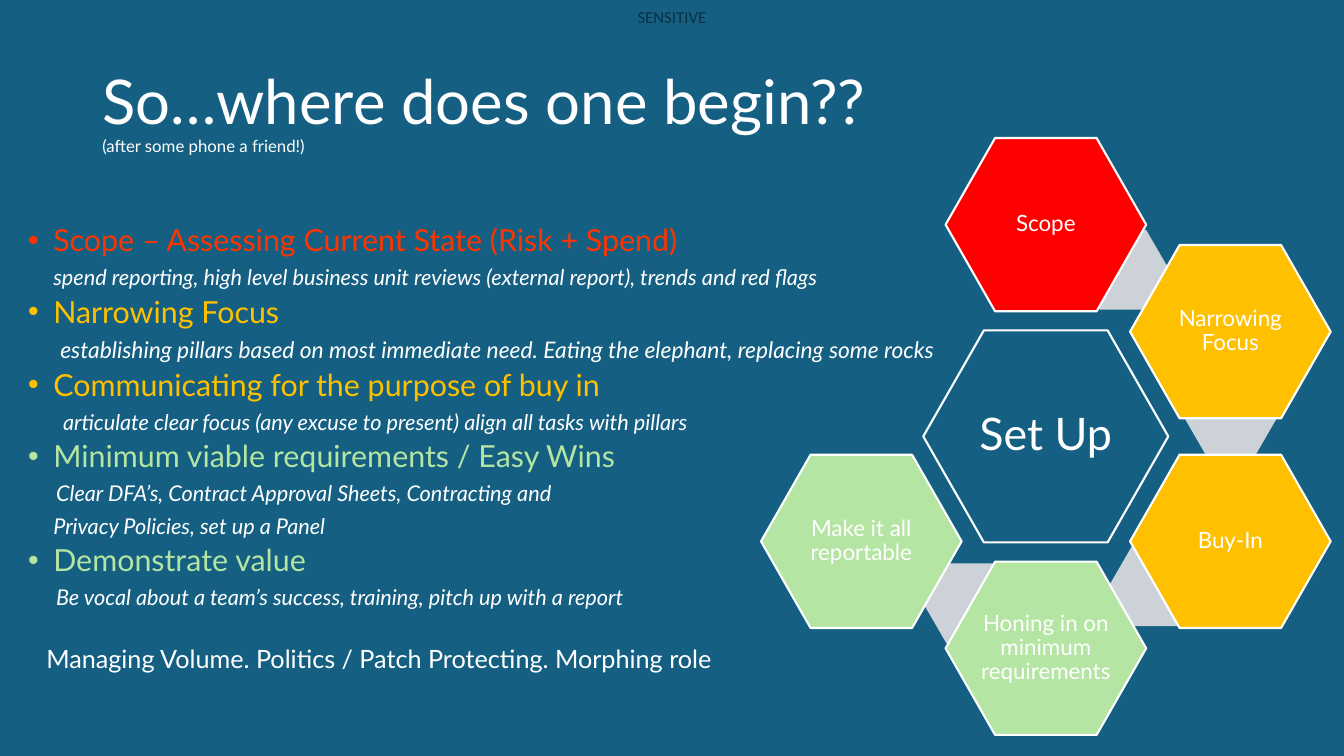
import pptx
import pptx.util
import pptx.dml.color
import pptx.enum.shapes
import pptx.enum.text
import pptx.oxml.ns
import lxml.etree
from dataclasses import dataclass

Pt = pptx.util.Pt
Align = pptx.enum.text.PP_ALIGN
Anchor = pptx.enum.text.MSO_ANCHOR


@dataclass(frozen=True)
class Theme:
    # Colours
    back: str = "156082"
    white: str = "FFFFFF"
    black: str = "000000"
    scarlet: str = "FF3300"
    red: str = "FF0000"
    gold: str = "FFC000"
    green: str = "B4E5A2"
    grey: str = "CCD2D8"
    # Fonts and type sizes
    font: str = "Lato"
    mark_font: str = "Calibri"
    title: float = 44
    hub: float = 32
    head: float = 21.7
    wide_note: float = 16.3
    note: float = 15.5
    foot: float = 18
    label: float = 16
    small: float = 12


def rgb(code):
    return pptx.dml.color.RGBColor.from_string(code)


def add_node(parent, tag, **attrs):
    return lxml.etree.SubElement(parent, pptx.oxml.ns.qn(tag), attrs)


class Page:
    def __init__(self, slide, theme):
        self.slide, self.theme = slide, theme
        fill = slide.background.fill
        fill.solid()
        fill.fore_color.rgb = rgb(theme.back)

    def run(self, para, text, size, hue=None, slant=False, font=None):
        run = para.add_run()
        run.text = text
        run.font.size = Pt(size)
        run.font.name = font or self.theme.font
        run.font.italic = slant
        run.font.color.rgb = rgb(hue or self.theme.white)
        return run

    def frame(self, shape, inset, anchor):
        frame = shape.text_frame
        frame.word_wrap = True
        frame.vertical_anchor = anchor
        frame.margin_left = frame.margin_right = Pt(inset[0])
        frame.margin_top = frame.margin_bottom = Pt(inset[1])
        return frame

    def box(self, left, top, width, height, inset=(7.2, 3.6), anchor=Anchor.TOP):
        shape = self.slide.shapes.add_textbox(Pt(left), Pt(top), Pt(width), Pt(height))
        return self.frame(shape, inset, anchor)

    def hex(self, left, top, width, height, fill, text=None, size=None, inset=1.5):
        shape = self.slide.shapes.add_shape(
            pptx.enum.shapes.MSO_SHAPE.HEXAGON, Pt(left), Pt(top), Pt(width), Pt(height))
        shape.shadow.inherit = False
        shape.adjustments[0] = 0.286 if text else 0.289
        shape.fill.solid()
        shape.fill.fore_color.rgb = rgb(fill)
        if not text:
            shape.line.fill.background()
            return
        shape.line.color.rgb = rgb(self.theme.white)
        shape.line.width = Pt(1.5)
        para = self.frame(shape, (inset, inset), Anchor.MIDDLE).paragraphs[0]
        para.alignment = Align.CENTER
        para.line_spacing = 0.9
        self.run(para, text, size)

    def line(self, frame, text, size, hue, indent=18, dot=False):
        first = not frame.paragraphs[0].runs
        para = frame.paragraphs[0] if first else frame.add_paragraph()
        para.space_before = Pt(0 if first else 10)
        para.line_spacing = Pt(round(size * 0.84, 1))
        props = para._p.get_or_add_pPr()
        props.set("marL", str(Pt(indent)))
        props.set("indent", str(Pt(-18 if dot else 0)))
        if dot:
            add_node(props, "a:buFont", typeface="Arial")
            add_node(props, "a:buChar", char="•")
        else:
            add_node(props, "a:buNone")
        self.run(para, text, size, hue, slant=not dot)


def main():
    deck = pptx.Presentation()
    deck.slide_width, deck.slide_height = Pt(960), Pt(540)
    theme = Theme()
    page = Page(deck.slides.add_slide(deck.slide_layouts[6]), theme)

    # Faded mark at the top
    para = page.box(452, 5, 56, 14.4, (0, 0)).paragraphs[0]
    para.alignment = Align.CENTER
    mark = page.run(para, "SENSITIVE", theme.small, theme.black, font=theme.mark_font)
    tint = mark._r.find(".//" + pptx.oxml.ns.qn("a:srgbClr"))
    add_node(tint, "a:alpha", val="50000")

    # Title
    para = page.box(66, 28.8, 828, 104.4, anchor=Anchor.MIDDLE).paragraphs[0]
    para.line_spacing = 0.9
    page.run(para, "So…where does one begin??", theme.title)
    para.add_line_break()
    page.run(para, "(after some phone a friend!)", theme.small)

    # Steps: heading, colour, then notes with size and indent
    steps = [
        ("Scope – Assessing Current State (Risk + Spend)", theme.scarlet, [
            ("spend reporting, high level business unit reviews (external report), "
             "trends and red flags", theme.note, 18)]),
        ("Narrowing Focus", theme.gold, [
            ("establishing pillars based on most immediate need. "
             "Eating the elephant, replacing some rocks", theme.wide_note, 23)]),
        ("Communicating for the purpose of buy in", theme.gold, [
            ("articulate clear focus (any excuse to present) align all tasks with pillars",
             theme.note, 25)]),
        ("Minimum viable requirements / Easy Wins", theme.green, [
            ("Clear DFA’s, Contract Approval Sheets, Contracting and", theme.note, 20),
            ("Privacy Policies, set up a Panel", theme.note, 18)]),
        ("Demonstrate value", theme.green, [
            ("Be vocal about a team’s success, training, pitch up with a report",
             theme.note, 20)]),
    ]
    body = page.box(13, 166, 828, 275, (7.2, 0))
    for head, hue, notes in steps:
        page.line(body, head, theme.head, hue, dot=True)
        for text, size, indent in notes:
            page.line(body, text, size, theme.white, indent)

    # Ring of hexagons round the hub, each with the link drawn beneath it
    page.hex(659.5, 236, 175, 151.4, theme.back, "Set Up", theme.hub, 3)
    ring = [
        ("Scope", theme.red, 1, 98.6, (769, 164.2)),
        ("Narrowing Focus", theme.gold, 2, 175, (846, 270)),
        ("Buy-In", theme.gold, 2, 324.8, (792, 390.2)),
        ("Honing in on minimum requirements", theme.green, 1, 401.2, (659.5, 402.5)),
        ("Make it all reportable", theme.green, 0, 324.8, None),
    ]
    for text, fill, col, top, link in ring:
        if link:
            page.hex(*link, 66.2, 57, theme.grey)
        page.hex(543.6 + 131.8 * col, top, 143.3, 123.8, fill, text, theme.label)

    # Closing line
    foot = page.box(26, 455.8, 535.7, 28.8)
    page.run(foot.paragraphs[0], "Managing Volume. Politics / Patch Protecting. Morphing role",
             theme.foot)

    deck.save("out.pptx")


if __name__ == "__main__":
    main()
